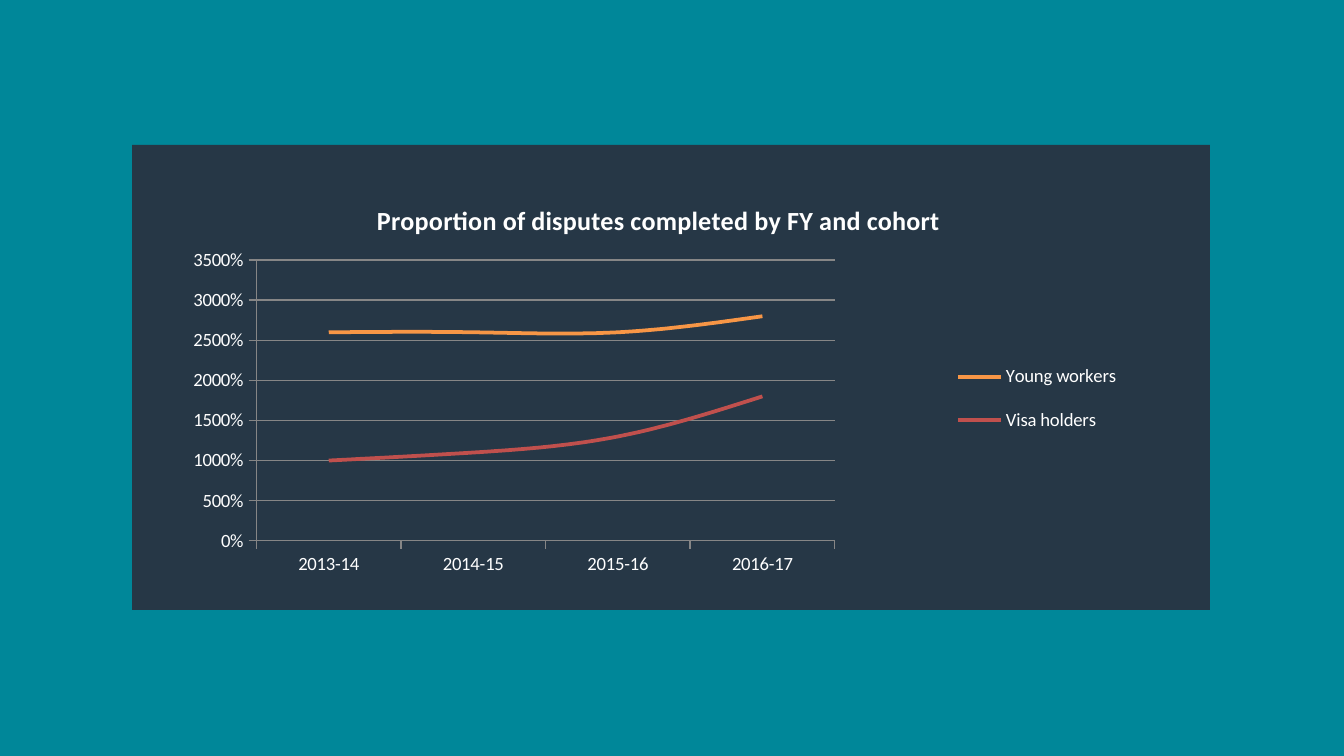
from dataclasses import dataclass

from lxml.etree import SubElement
from pptx import Presentation
from pptx.chart.data import CategoryChartData
from pptx.dml.color import RGBColor
from pptx.enum.chart import XL_CHART_TYPE, XL_LEGEND_POSITION, XL_MARKER_STYLE, XL_TICK_MARK
from pptx.enum.shapes import MSO_SHAPE
from pptx.oxml import parse_xml
from pptx.oxml.ns import nsdecls, qn
from pptx.util import Emu, Pt

SLIDE_WIDTH, SLIDE_HEIGHT = 1344, 756
EMU_PER_PX = 9144000 / SLIDE_WIDTH


@dataclass(frozen=True)
class Theme:
    background: RGBColor = RGBColor.from_string("008799")
    panel: RGBColor = RGBColor.from_string("263746")
    text: RGBColor = RGBColor.from_string("FFFFFF")
    rule: RGBColor = RGBColor.from_string("868686")
    font: str = "Calibri"
    title_size: Pt = Pt(14)
    label_size: Pt = Pt(10)
    rule_width: Pt = Pt(0.75)
    series_width: Pt = Pt(2)


THEME = Theme()
YEARS = ["2013-14", "2014-15", "2015-16", "2016-17"]
COHORTS = [
    ("Young workers", (26, 26, 26, 28), RGBColor.from_string("F79646")),
    ("Visa holders", (10, 11, 13, 18), RGBColor.from_string("C0504D")),
]


def px(length):
    return Emu(round(length * EMU_PER_PX))


def set_layout(part, index, **fractions):
    """Give a chart part a manual layout, in fractions of the chart's size."""
    for old_layout in part.findall(qn("c:layout")):
        part.remove(old_layout)
    layout = parse_xml(f"<c:layout {nsdecls('c')}><c:manualLayout/></c:layout>")
    for tag, value in fractions.items():
        SubElement(layout[0], qn(f"c:{tag}")).set("val", str(value))
    part.insert(index, layout)


def style_font(font, size):
    font.name = THEME.font
    font.size = size
    font.color.rgb = THEME.text


def style_rule(line):
    line.color.rgb = THEME.rule
    line.width = THEME.rule_width


def style_title(chart):
    title = chart.chart_title
    title.text_frame.text = "Proportion of disputes completed by FY and cohort"
    title_font = title.text_frame.paragraphs[0].runs[0].font
    style_font(title_font, THEME.title_size)
    title_font.bold = True
    element = title._element
    set_layout(element, 1, xMode="edge", yMode="edge", x=0.19, y=0.07)
    element.find(qn("c:overlay")).set("val", "1")


def style_axes(chart):
    for axis in (chart.category_axis, chart.value_axis):
        style_font(axis.tick_labels.font, THEME.label_size)
        style_rule(axis.format.line)
        axis.major_tick_mark = XL_TICK_MARK.OUTSIDE
        axis.minor_tick_mark = XL_TICK_MARK.NONE
    percent = chart.value_axis
    percent.minimum_scale, percent.maximum_scale, percent.major_unit = 0, 35, 5
    percent.has_major_gridlines = True
    style_rule(percent.major_gridlines.format.line)
    percent.tick_labels.number_format = "0%"
    percent.tick_labels.number_format_is_linked = False


def style_legend(chart):
    chart.has_legend = True
    legend = chart.legend
    legend.position = XL_LEGEND_POSITION.RIGHT
    legend.include_in_layout = False
    style_font(legend.font, THEME.label_size)
    set_layout(legend._element, 1, xMode="edge", yMode="edge",
               x=0.78, y=0.42, w=0.2, h=0.26)


def add_dispute_chart(slide, left, top, width, height):
    disputes = CategoryChartData(number_format="General")
    disputes.categories = YEARS
    for cohort, shares, _ in COHORTS:
        disputes.add_series(cohort, shares)
    chart = slide.shapes.add_chart(
        XL_CHART_TYPE.LINE, px(left), px(top), px(width), px(height), disputes).chart
    style_font(chart.font, THEME.label_size)
    style_title(chart)
    style_axes(chart)
    style_legend(chart)

    plot = chart.plots[0]
    plot.vary_by_categories = False
    set_layout(chart._chartSpace.chart.plotArea, 0, layoutTarget="inner",
               xMode="edge", yMode="edge", x=0.07, y=0.22, w=0.6, h=0.67)
    for trend, (_, _, color) in zip(plot.series, COHORTS):
        trend.smooth = True
        trend.marker.style = XL_MARKER_STYLE.NONE
        trend.format.line.color.rgb = color
        trend.format.line.width = THEME.series_width


def add_chart_panel(slide, left, top, width, height):
    """Draw the dark panel with the chart inset in it."""
    panel = slide.shapes.add_shape(
        MSO_SHAPE.RECTANGLE, px(left), px(top), px(width), px(height))
    panel.shadow.inherit = False
    panel.fill.solid()
    panel.fill.fore_color.rgb = THEME.panel
    panel.line.fill.background()
    inset_x, inset_y = 57, 23
    add_dispute_chart(slide, left + inset_x, top + inset_y,
                      width - 2 * inset_x, height - 2 * inset_y)


def main():
    presentation = Presentation()
    presentation.slide_width = px(SLIDE_WIDTH)
    presentation.slide_height = px(SLIDE_HEIGHT)
    slide = presentation.slides.add_slide(presentation.slide_layouts[6])
    slide.background.fill.solid()
    slide.background.fill.fore_color.rgb = THEME.background
    add_chart_panel(slide, 132, 145, 1078, 465)
    presentation.save("out.pptx")


if __name__ == "__main__":
    main()
